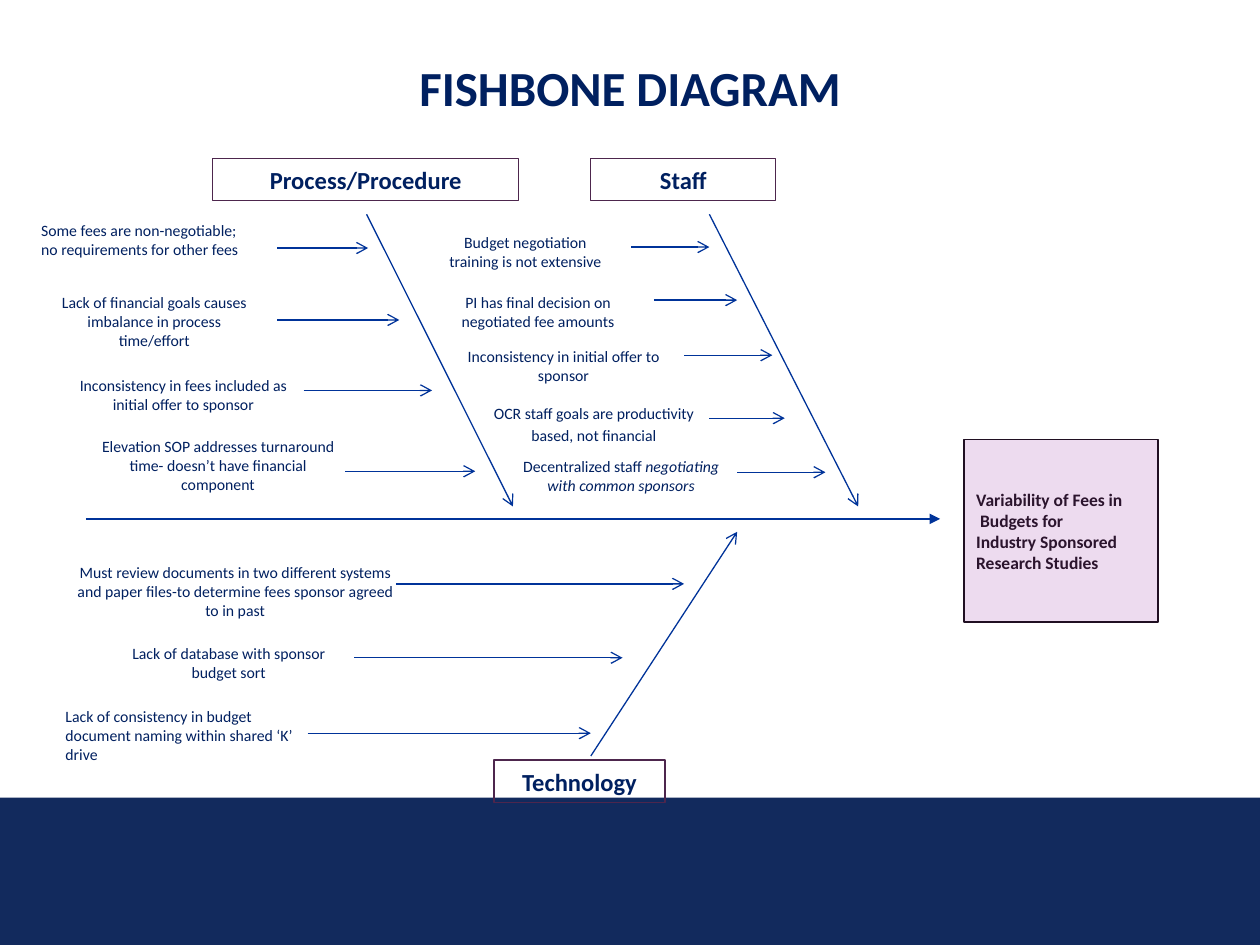
from dataclasses import dataclass

import pptx
import pptx.dml.color
import pptx.enum.shapes
import pptx.enum.text
import pptx.oxml.ns
import pptx.oxml.xmlchemy
import pptx.util

Cm = pptx.util.Cm
Align = pptx.enum.text.PP_ALIGN


@dataclass(frozen=True)
class Theme:
    """Colours, font and type sizes of the slide."""
    font: str = "Calibri"
    ink: str = "002060"
    band: str = "122A5D"
    bone: str = "003399"
    label_edge: str = "4D264D"
    effect_fill: str = "E1C1E4"
    effect_edge: str = "200F22"
    effect_ink: str = "2B142D"
    title_size: int = 28
    label_size: int = 14
    effect_size: int = 10
    cause_size: int = 9


@dataclass(frozen=True)
class Cause:
    """A cause, its text box, and its arrow as start x, end x and y."""
    text: str
    box: tuple
    arrow: tuple
    emphasis: str = ""
    align: Align = Align.CENTER
    spacing: float = 1.0


@dataclass(frozen=True)
class Branch:
    """A category with its label box, bone and causes, relative to its origin."""
    label: str
    origin: tuple
    label_box: tuple
    bone: tuple
    causes: tuple


THEME = Theme()

BRANCHES = (
    Branch("Process/Procedure", (0.58, 3.2), (3.71, 0, 6.17, 0.84), (6.81, 1.12, 9.76, 7.01), (
        Cause("Some fees are non-negotiable; no requirements for other fees",
              (0, 1.12, 4.83, 1.02), (5.01, 6.84, 1.8), align=Align.LEFT),
        Cause("Lack of financial goals causes imbalance in process time/effort",
              (0.23, 2.57, 4.6, 1.42), (5.01, 7.47, 3.25)),
        Cause("Inconsistency in fees included as initial offer to sponsor",
              (0.69, 4.24, 4.85, 1.02), (5.54, 8.13, 4.67)),
        Cause("Elevation SOP addresses turnaround time- doesn’t have financial component",
              (1.15, 5.46, 5.33, 1.42), (6.38, 9, 6.3)),
    )),
    Branch("Staff", (8.71, 3.2), (3.2, 0, 3.73, 0.84), (5.59, 1.12, 8.59, 7.01), (
        Cause("Budget negotiation training is not extensive",
              (0, 1.37, 3.76, 1.02), (4.02, 5.59, 1.78)),
        Cause("PI has final decision on negotiated fee amounts",
              (0, 2.57, 4.27, 1.02), (4.47, 6.15, 2.85)),
        Cause("Inconsistency in initial offer to sponsor",
              (0.21, 3.66, 4.88, 1.02), (5.08, 6.86, 3.96)),
        Cause("OCR staff goals are productivity based, not financial",
              (0.66, 4.62, 5.2, 1.42), (5.59, 7.11, 5.23), spacing=1.16),
        Cause("Decentralized staff ", (1.5, 5.89, 4.62, 1.02), (6.15, 7.93, 6.32),
              emphasis="negotiating with common sponsors"),
    )),
    Branch("Technology", (1.07, 10.72), (8.89, 4.6, 3.45, 0.86), (10.84, 4.52, 13.79, 0), (
        Cause("Must review documents in two different systems and paper files-to determine "
              "fees sponsor agreed to in past",
              (0.2, 0.48, 6.94, 1.42), (6.91, 12.72, 1.05)),
        Cause("Lack of database with sponsor budget sort",
              (1.04, 2.13, 5, 1.02), (6.07, 11.48, 2.54)),
        Cause("Lack of consistency in budget document naming within shared ‘K’ drive",
              (0, 3.4, 5.08, 1.42), (5.13, 10.84, 4.06), align=Align.LEFT),
    )),
)


def rgb(value):
    """Turn a hex string into a colour."""
    return pptx.dml.color.RGBColor.from_string(value)


def add_element(parent, tag, **attributes):
    """Append an XML element to its parent."""
    element = pptx.oxml.xmlchemy.OxmlElement(tag)
    for key, value in attributes.items():
        element.set(key, value)
    parent.append(element)


def write(shape, *lines, size, color=THEME.ink, bold=False, align=Align.CENTER,
          emphasis="", spacing=1.0):
    """Write one paragraph per line, with an italic ending if emphasis is given."""
    frame = shape.text_frame
    frame.word_wrap = True
    frame.vertical_anchor = pptx.enum.text.MSO_ANCHOR.MIDDLE
    for index, line in enumerate(lines):
        paragraph = frame.add_paragraph() if index else frame.paragraphs[0]
        paragraph.alignment = align
        paragraph.line_spacing = spacing
        for text, italic in ((line, False), (emphasis, True)):
            if text:
                run = paragraph.add_run()
                run.text = text
                run.font.name = THEME.font
                run.font.size = pptx.util.Pt(size)
                run.font.bold = bold
                run.font.italic = italic
                run.font.color.rgb = rgb(color)
    return frame


def add_text(slide, box, *lines, **style):
    """Place a text box and write in it."""
    return write(slide.shapes.add_textbox(*map(Cm, box)), *lines, **style)


def add_panel(slide, box, fill=None, edge=None, weight=0.75):
    """Place a flat rectangle."""
    panel = slide.shapes.add_shape(pptx.enum.shapes.MSO_SHAPE.RECTANGLE, *map(Cm, box))
    panel.shadow.inherit = False
    if fill:
        panel.fill.solid()
        panel.fill.fore_color.rgb = rgb(fill)
    else:
        panel.fill.background()
    if edge:
        panel.line.color.rgb = rgb(edge)
        panel.line.width = pptx.util.Pt(weight)
    else:
        panel.line.fill.background()
    return panel


def add_arrow(slide, ends, weight=0.75, head="arrow"):
    """Draw a straight arrow between two points."""
    arrow = slide.shapes.add_connector(
        pptx.enum.shapes.MSO_CONNECTOR.STRAIGHT, *map(Cm, ends))
    arrow.line.color.rgb = rgb(THEME.bone)
    arrow.line.width = pptx.util.Pt(weight)
    properties = arrow._element.spPr
    add_element(properties.find(pptx.oxml.ns.qn("a:ln")), "a:tailEnd", type=head)
    add_element(properties, "a:effectLst")


def add_effect(slide, box):
    """Place the translucent panel that names the effect."""
    panel = add_panel(slide, box, THEME.effect_fill, THEME.effect_edge, 1)
    tint = panel._element.spPr.find(".//" + pptx.oxml.ns.qn("a:srgbClr"))
    add_element(tint, "a:alpha", val="58000")
    frame = write(panel, "Variability of Fees in", "Budgets for", "Industry Sponsored",
                  "Research Studies", size=THEME.effect_size, color=THEME.effect_ink,
                  bold=True, align=Align.LEFT)
    frame.paragraphs[1]._p.get_or_add_pPr().set("marL", str(Cm(0.08)))


def add_branch(slide, branch):
    """Place a category label, its bone, and its causes with their arrows."""
    left, top = branch.origin

    def shift(box):
        """Move a relative box to the origin of the branch."""
        return (left + box[0], top + box[1], *box[2:])

    label = add_panel(slide, shift(branch.label_box), edge=THEME.label_edge)
    write(label, branch.label, size=THEME.label_size, bold=True)
    x1, y1, x2, y2 = branch.bone
    add_arrow(slide, (left + x1, top + y1, left + x2, top + y2))
    for cause in branch.causes:
        add_text(slide, shift(cause.box), cause.text, size=THEME.cause_size,
                 align=cause.align, emphasis=cause.emphasis, spacing=cause.spacing)
        start, end, level = cause.arrow
        add_arrow(slide, (left + start, top + level, left + end, top + level))


def main():
    """Build the fishbone slide and save it."""
    deck = pptx.Presentation()
    deck.slide_width, deck.slide_height = Cm(25.4), Cm(19.05)
    slide = deck.slides.add_slide(deck.slide_layouts[6])
    add_panel(slide, (0, 16.08, 25.4, 2.97), THEME.band)
    add_effect(slide, (19.43, 8.86, 3.91, 3.68))
    add_arrow(slide, (1.73, 10.46, 18.95, 10.46), weight=1.5, head="triangle")
    for branch in BRANCHES:
        add_branch(slide, branch)
    add_text(slide, (1.27, 0.76, 22.86, 1.98), "FISHBONE DIAGRAM",
             size=THEME.title_size, bold=True)
    deck.save("out.pptx")


if __name__ == "__main__":
    main()
